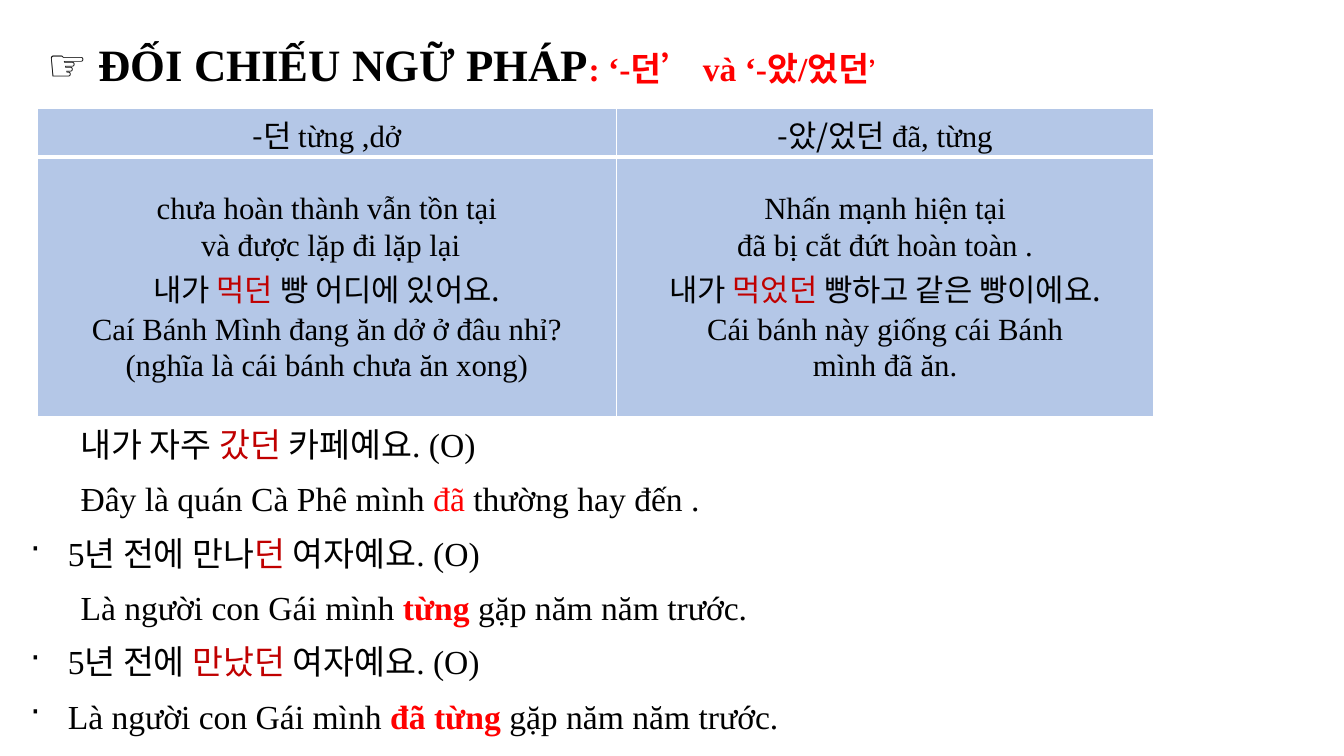
from lxml.etree import SubElement
from pptx import Presentation
from pptx.dml.color import RGBColor
from pptx.enum.text import MSO_ANCHOR, MSO_AUTO_SIZE, PP_ALIGN
from pptx.oxml.ns import qn
from pptx.util import Cm, Pt

BLACK = RGBColor(0x00, 0x00, 0x00)
WHITE = RGBColor(0xFF, 0xFF, 0xFF)
RED = RGBColor(0xFF, 0x00, 0x00)
DARK_RED = RGBColor(0xC0, 0x00, 0x00)
PALE_BLUE = RGBColor(0xB4, 0xC7, 0xE7)
LATIN = "Times New Roman"
KOREAN = "Noto Sans CJK KR"
SYMBOL = "Lato"


class GrammarSlide:
    line_spacing = 1.07
    space_after = Pt(8)

    def __init__(self, deck):
        self.slide = deck.slides.add_slide(deck.slide_layouts[6])

    def run(self, paragraph, text, size, color=BLACK, bold=False, face=LATIN):
        run = paragraph.add_run()
        run.text = text
        run.font.size = Pt(size)
        run.font.bold = bold
        run.font.color.rgb = color
        run.font.name = face
        east_asian = SubElement(run._r.get_or_add_rPr(), qn("a:ea"))
        east_asian.set("typeface", KOREAN)

    def paragraphs(self, frame, lines, align):
        for index, runs in enumerate(lines):
            paragraph = frame.add_paragraph() if index else frame.paragraphs[0]
            paragraph.alignment = align
            paragraph.line_spacing = self.line_spacing
            for run in runs:
                self.run(paragraph, *run)
            yield paragraph

    def text(self, left, top, width, height, lines, indents):
        frame = self.slide.shapes.add_textbox(Cm(left), Cm(top), Cm(width), Cm(height)).text_frame
        frame.word_wrap = True
        frame.auto_size = MSO_AUTO_SIZE.SHAPE_TO_FIT_TEXT
        written = self.paragraphs(frame, lines, PP_ALIGN.JUSTIFY)
        for paragraph, (margin, bullet) in zip(written, indents):
            paragraph.space_after = self.space_after
            properties = paragraph._p.get_or_add_pPr()
            properties.set("marL", str(Cm(margin)))
            properties.set("indent", str(-Cm(margin) if bullet else 0))
            if bullet:
                SubElement(properties, qn("a:buChar")).set("char", bullet)

    def borders(self, cell, widths):
        properties = cell._tc.get_or_add_tcPr()
        for side, width in zip("LRTB", widths):
            line = SubElement(properties, qn(f"a:ln{side}"), w=str(Pt(width)))
            fill = SubElement(line, qn("a:solidFill"))
            SubElement(fill, qn("a:srgbClr")).set("val", str(WHITE))

    def table(self, left, top, columns, rows, contents):
        table = self.slide.shapes.add_table(
            len(rows), len(columns), Cm(left), Cm(top), Cm(sum(columns)), Cm(sum(rows))
        ).table
        table.horz_banding = False
        for column, width in zip(table.columns, columns):
            column.width = Cm(width)
        for r, height in enumerate(rows):
            table.rows[r].height = Cm(height)
            for c, lines in enumerate(contents[r]):
                cell = table.cell(r, c)
                self.borders(cell, (1, 1, 3 if r else 1, 1 if r else 3))
                cell.fill.solid()
                cell.fill.fore_color.rgb = PALE_BLUE
                cell.vertical_anchor = MSO_ANCHOR.MIDDLE
                cell.margin_left = cell.margin_right = Cm(0.18)
                cell.margin_top = cell.margin_bottom = 0
                list(self.paragraphs(cell.text_frame, lines, PP_ALIGN.CENTER))


def heading(ending, meaning):
    return [[(ending, 22, BLACK, False, KOREAN), (meaning, 22)]]


def usage(explanation, before, verb, after, translation):
    example = [
        (before, 22, BLACK, False, KOREAN),
        (verb, 22, DARK_RED, False, KOREAN),
        (after, 22, BLACK, False, KOREAN),
    ]
    return [
        *([(line, 22)] for line in explanation),
        example,
        *([(line, 22)] for line in translation),
    ]


def sentence(before, key, after, color, bold=False):
    return [(before, 24), (key, 24, color, bold), (after, 24)]


def main():
    deck = Presentation()
    deck.slide_width, deck.slide_height = Cm(33.87), Cm(19.05)
    page = GrammarSlide(deck)

    title = [
        ("☞ ", 32, BLACK, True, SYMBOL),
        ("ĐỐI CHIẾU NGỮ PHÁP", 32, BLACK, True),
        (": ‘-던’ và ‘-았/었던", 24, RED, True),
        ("’", 18, RED, True),
    ]
    page.text(0.94, 0.71, 23.44, 1.73, [title], [(0, None)])

    headings = [heading("-던 ", "từng ,dở"), heading("-았/었던 ", "đã, từng")]
    unfinished = usage(
        ["chưa hoàn thành vẫn tồn tại", " và được lặp đi lặp lại"],
        "내가 ", "먹던", " 빵 어디에 있어요.",
        ["Caí Bánh Mình đang ăn dở ở đâu nhỉ?", "(nghĩa là cái bánh chưa ăn xong)"],
    )
    finished = usage(
        ["Nhấn mạnh hiện tại", "đã bị cắt đứt hoàn toàn ."],
        "내가 ", "먹었던", " 빵하고 같은 빵이에요.",
        ["Cái bánh này giống cái Bánh", "mình đã ăn."],
    )
    page.table(0.94, 2.72, (14.59, 13.55), (1.24, 6.54), [headings, [unfinished, finished]])

    examples = [
        sentence("내가 자주 ", "갔던 ", "카페예요. (O)", DARK_RED),
        sentence("Đây là quán Cà Phê mình ", "đã ", "thường hay đến .", RED),
        sentence("5년 전에 만나", "던 ", "여자예요. (O)", DARK_RED),
        sentence("Là người con Gái mình ", "từng", " gặp năm năm trước.", RED, True),
        sentence("5년 전에 ", "만났던 ", "여자예요. (O)", DARK_RED),
        sentence("Là người con Gái mình ", "đã từng", " gặp năm năm trước.", RED, True),
    ]
    plain, bulleted = (1.27, None), (0.95, "·")
    page.text(0.51, 10.49, 25.83, 8.26, examples,
              [plain, plain, bulleted, plain, bulleted, bulleted])

    deck.save("out.pptx")


if __name__ == "__main__":
    main()
